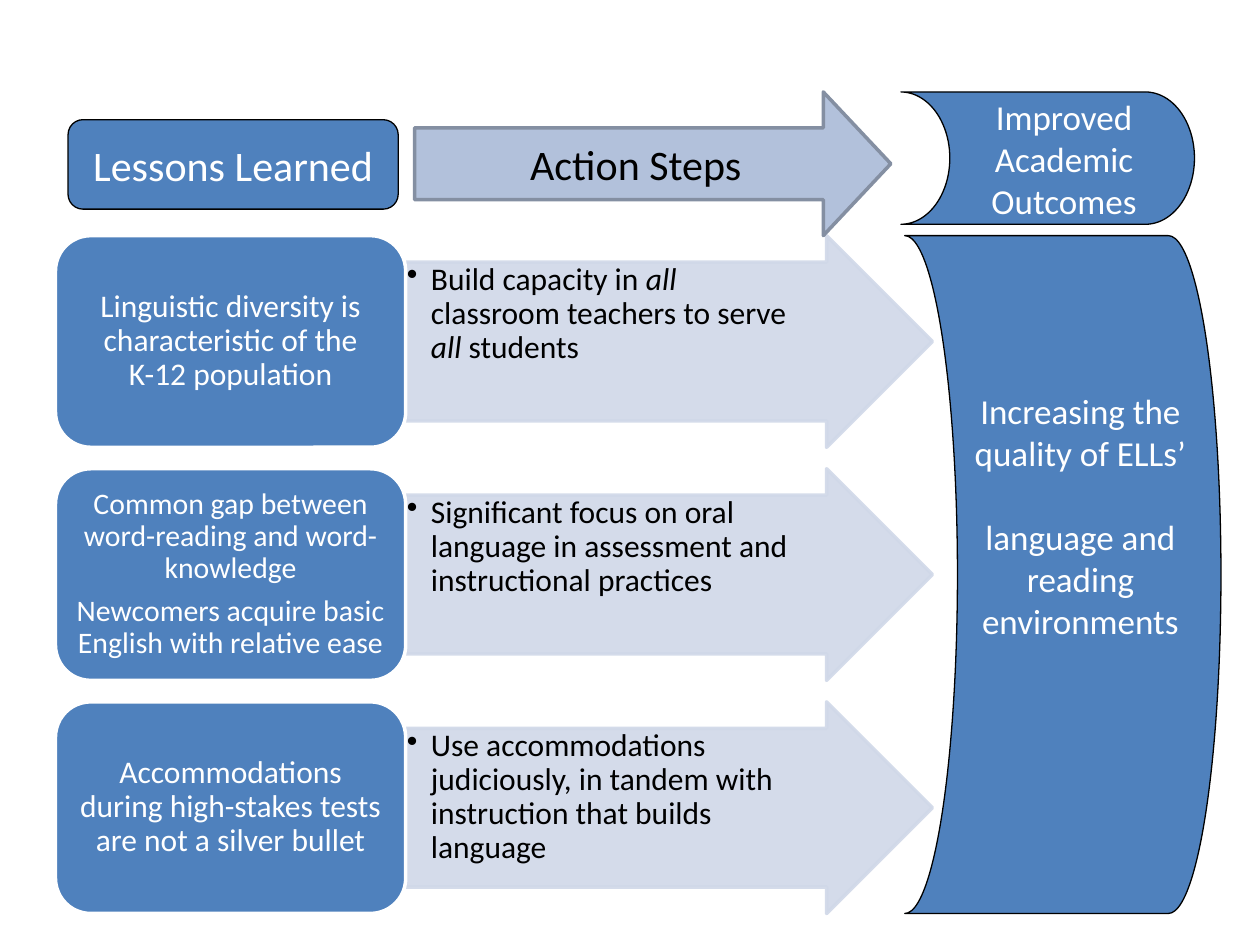
import pptx
import pptx.util
import pptx.dml.color
import pptx.enum.shapes
import pptx.enum.text
import pptx.oxml.ns
import lxml.etree

Kind = pptx.enum.shapes.MSO_SHAPE
Align = pptx.enum.text.PP_ALIGN
Anchor = pptx.enum.text.MSO_ANCHOR
Pt = pptx.util.Pt
qn = pptx.oxml.ns.qn

HUES = {
    "blue": "4F81BD", "pale": "D0D8E8", "mist": "B2C1DB", "slate": "848FA2",
    "white": "FFFFFF", "black": "000000",
}


class Board:
    """Style and current slide; lengths are cells of a 100 x 75 grid."""
    font = "Calibri"
    cols, rows = 100, 75

    def __init__(self, deck):
        self.slide = deck.slides.add_slide(deck.slide_layouts[6])
        self.dx = deck.slide_width / self.cols
        self.dy = deck.slide_height / self.rows

    def rect(self, x, y, w, h):
        return (round(x * self.dx), round(y * self.dy),
                round(w * self.dx), round(h * self.dy))

    def paint(self, fill, hue):
        fill.solid()
        fill.fore_color.rgb = pptx.dml.color.RGBColor.from_string(HUES[hue])

    def shape(self, kind, box, fill, edge, width, alpha=None, adj=(), turn=0):
        item = self.slide.shapes.add_shape(kind, *self.rect(*box))
        item.shadow.inherit = False
        item.rotation = turn
        for i, val in enumerate(adj):
            item.adjustments[i] = val
        self.paint(item.fill, fill)
        self.paint(item.line.fill, edge)
        item.line.width = Pt(width)
        if alpha:
            for tone in item._element.spPr.iter(qn("a:srgbClr")):
                lxml.etree.SubElement(tone, qn("a:alpha"),
                                      val=str(alpha * 1000))
        return item

    def label(self, box):
        return self.slide.shapes.add_textbox(*self.rect(*box))

    def text(self, item, lines, size, hue="white", align=Align.CENTER,
             anchor=Anchor.MIDDLE, pad=None, lead=None, gap=0, dot=False):
        """Fill an item with paragraphs; text between asterisks is italic."""
        frame = item.text_frame
        frame.word_wrap = True
        frame.vertical_anchor = anchor
        if pad:
            (frame.margin_left, frame.margin_top, frame.margin_right,
             frame.margin_bottom) = [pptx.util.Inches(n) for n in pad]
        for n, line in enumerate(lines):
            para = frame.add_paragraph() if n else frame.paragraphs[0]
            para.alignment = align
            if lead:
                para.line_spacing = lead
            if n:
                para.space_before = Pt(gap)
            if dot:
                self.bullet(para)
            for i, part in enumerate(line.split("*")):
                run = para.add_run()
                run.text = part
                run.font.name = self.font
                run.font.size = Pt(size)
                run.font.italic = i % 2 == 1
                self.paint(run.font.fill, hue)

    def bullet(self, para):
        props = para._p.get_or_add_pPr()
        dent = pptx.util.Inches(0.19)
        props.set("marL", str(dent))
        props.set("indent", str(-dent))
        lxml.etree.SubElement(props, qn("a:buChar"), char="•")


STEPS = [
    (["Linguistic diversity is characteristic of the K-12 population"], 18,
     "Build capacity in *all* classroom teachers to serve *all* students"),
    (["Common gap between word-reading and word-knowledge",
      "Newcomers acquire basic English with relative ease"], 17,
     "Significant focus on oral language in assessment and "
     "instructional practices"),
    (["Accommodations during high-stakes tests are not a silver bullet"], 18,
     "Use accommodations judiciously, in tandem with instruction "
     "that builds language"),
]


def main():
    deck = pptx.Presentation()
    deck.slide_width = pptx.util.Inches(10)
    deck.slide_height = pptx.util.Inches(7.5)
    board = Board(deck)

    # Lessons and the actions that follow from them
    top, pitch, high = 18.7, 18.5, 16.8
    left, mid = 4.4, 32.2
    for n, (lesson, size, action) in enumerate(STEPS):
        y = top + n * pitch
        arrow = board.shape(Kind.RIGHT_ARROW, (mid, y, 41.8, high), "pale",
                            "pale", 2, alpha=90, adj=(0.75, 0.5))
        board.text(arrow, [action], 18, "black", Align.LEFT, Anchor.TOP,
                   pad=(0.01, 0.01, 0.43, 0.01), lead=0.9, dot=True)
        card = board.shape(Kind.ROUNDED_RECTANGLE,
                           (left, y, mid - left, high), "blue", "white", 2)
        board.text(card, lesson, size, pad=(0.07, 0.04, 0.07, 0.04),
                   lead=0.9, gap=6)

    # Outcome panel
    board.shape(Kind.FLOWCHART_STORED_DATA, (71.8, top, 25.1, 53.8),
                "blue", "black", 0.75, turn=180)

    # Column heads
    head = board.shape(Kind.ROUNDED_RECTANGLE, (5.4, 9.5, 26.2, 7.1),
                       "blue", "black", 0.75)
    board.text(head, ["Lessons Learned"], 24)
    head = board.shape(Kind.RIGHT_ARROW, (32.9, 7.3, 37.8, 11.4),
                       "mist", "slate", 2, adj=(0.5, 0.47))
    board.text(head, ["Action Steps"], 24, "black")
    board.shape(Kind.FLOWCHART_STORED_DATA, (71.5, 7.3, 23.3, 10.5),
                "blue", "black", 0.75, turn=180)

    # Outcome texts
    board.text(board.label((74, 7.1, 20.9, 11.1)),
               ["Improved Academic Outcomes"], 20, anchor=Anchor.TOP)
    board.text(board.label((76.2, 30.4, 19.1, 17.8)),
               ["Increasing the quality of ELLs’",
                "language and reading environments"], 20,
               anchor=Anchor.TOP, gap=24)

    deck.save("out.pptx")


if __name__ == "__main__":
    main()
